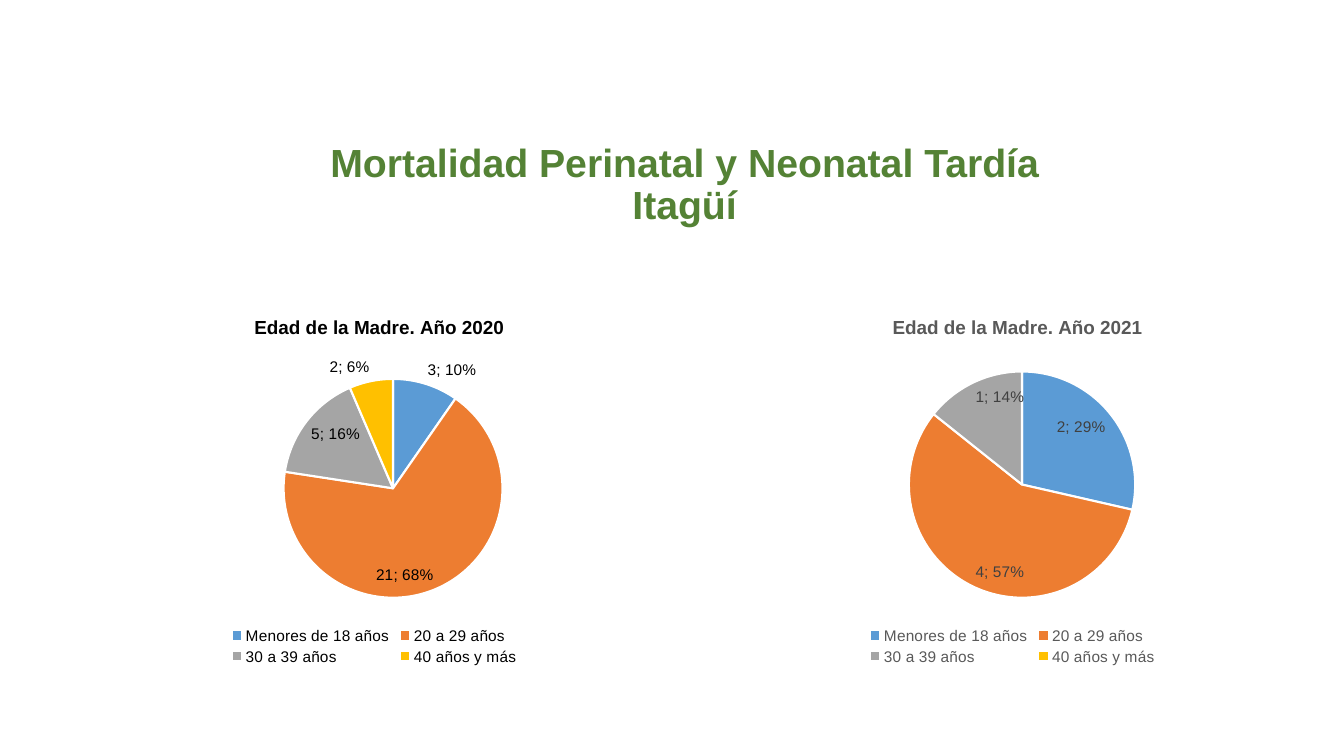
from lxml import etree
from pptx import Presentation
from pptx.chart.data import CategoryChartData
from pptx.dml.color import RGBColor
from pptx.enum.chart import XL_CHART_TYPE, XL_LABEL_POSITION, XL_LEGEND_POSITION
from pptx.enum.text import MSO_ANCHOR, PP_ALIGN
from pptx.oxml.ns import qn
from pptx.util import Inches, Pt

PIE = XL_CHART_TYPE.PIE
INSIDE = XL_LABEL_POSITION.INSIDE_END
OUTSIDE = XL_LABEL_POSITION.OUTSIDE_END
LEGEND_BOTTOM = XL_LEGEND_POSITION.BOTTOM
CENTER = PP_ALIGN.CENTER
BOTTOM = MSO_ANCHOR.BOTTOM

COLORS = {
    "green": "548235", "black": "000000", "gray": "595959",
    "dark": "404040", "white": "FFFFFF",
}
AGE_COLORS = {
    "Menores de 18 años": "5B9BD5", "20 a 29 años": "ED7D31",
    "30 a 39 años": "A5A5A5", "40 años y más": "FFC000",
}
TITLE_LAYOUT = {"x": 0.3, "y": 0.04}
LEGEND_LAYOUT = {"x": 0.26, "y": 0.88, "w": 0.48, "h": 0.12}
YEARS = [
    {"year": 2020, "values": (3, 21, 5, 2), "text": "black", "label": "black",
     "positions": (OUTSIDE, INSIDE, INSIDE, OUTSIDE),
     "plot": {"x": 0.35, "y": 0.22, "w": 0.36, "h": 0.59}},
    {"year": 2021, "values": (2, 4, 1, 0), "text": "gray", "label": "dark",
     "positions": (INSIDE,) * 4,
     "plot": {"x": 0.33, "y": 0.2, "w": 0.37, "h": 0.61}},
]


class SlideBuilder:
    """Draws styled titles and pie charts on one slide."""

    def __init__(self, slide):
        self.slide = slide
        self.font_name = "Arial"

    def style_font(self, font, size, color, bold=False):
        values = {"name": self.font_name, "size": Pt(size), "bold": bold}
        for name, value in values.items():
            setattr(font, name, value)
        font.color.rgb = RGBColor.from_string(COLORS[color])

    def title(self, text, left, top, width, height):
        shape = self.slide.shapes.add_textbox(
            Inches(left), Inches(top), Inches(width), Inches(height))
        frame = shape.text_frame
        frame.word_wrap = True
        frame.vertical_anchor = BOTTOM
        paragraph = frame.paragraphs[0]
        paragraph.text = text
        paragraph.alignment = CENTER
        paragraph.line_spacing = 0.9
        for run in paragraph.runs:
            self.style_font(run.font, 28, "green", True)

    def place(self, element, position, inner=False):
        for old in element.findall(qn("c:layout")):
            element.remove(old)
        layout = etree.Element(qn("c:layout"))
        manual = etree.SubElement(layout, qn("c:manualLayout"))
        settings = {"layoutTarget": "inner"} if inner else {}
        settings.update({"xMode": "edge", "yMode": "edge"})
        settings.update(position)
        for name, value in settings.items():
            etree.SubElement(manual, qn(f"c:{name}")).set("val", str(value))
        overlay = element.find(qn("c:overlay"))
        if overlay is None:
            element.insert(0, layout)
        else:
            overlay.addprevious(layout)

    def pie(self, year, left, top, width, height):
        data = CategoryChartData()
        data.categories = list(AGE_COLORS)
        data.add_series("Series 1", year["values"])
        chart = self.slide.shapes.add_chart(
            PIE, Inches(left), Inches(top), Inches(width), Inches(height), data).chart
        self.style_font(chart.font, 11, "black")
        chart.has_title = True
        paragraph = chart.chart_title.text_frame.paragraphs[0]
        run = paragraph.add_run()
        run.text = f"Edad de la Madre. Año {year['year']}"
        self.style_font(run.font, 13.5, year["text"], True)
        chart.chart_title.include_in_layout = False
        chart.has_legend = True
        legend = chart.legend
        legend.position = LEGEND_BOTTOM
        legend.include_in_layout = False
        self.style_font(legend.font, 11, year["text"])
        self.slices(chart, year)
        root = chart.element.find(qn("c:chart"))
        self.place(root.find(qn("c:title")), TITLE_LAYOUT)
        self.place(root.find(qn("c:legend")), LEGEND_LAYOUT)
        self.place(root.find(qn("c:plotArea")), year["plot"], True)

    def slices(self, chart, year):
        plot = chart.plots[0]
        plot.vary_by_categories = True
        series = plot.series[0]
        series.data_labels.show_value = False
        for index, color in enumerate(AGE_COLORS.values()):
            point = series.points[index]
            point.format.fill.solid()
            point.format.fill.fore_color.rgb = RGBColor.from_string(color)
            point.format.line.color.rgb = RGBColor.from_string(COLORS["white"])
            point.format.line.width = Pt(1.5)
            if year["values"][index]:
                self.style_font(point.data_label.font, 11, year["label"])
                point.data_label.position = year["positions"][index]
        for label in chart.element.iter(qn("c:dLbl")):
            label.find(qn("c:showPercent")).set("val", "1")
            separator = etree.SubElement(label, qn("c:separator"))
            separator.text = "; "


def main():
    presentation = Presentation()
    presentation.slide_width = Inches(13.33)
    presentation.slide_height = Inches(7.5)
    builder = SlideBuilder(presentation.slides.add_slide(presentation.slide_layouts[6]))
    builder.title("Mortalidad Perinatal y Neonatal Tardía\vItagüí", 1.55, 1.31, 10.48, 1)
    for index, year in enumerate(YEARS):
        builder.pie(year, 0.65 + index * 6.33, 2.95, 6.13, 3.68)
    presentation.save("out.pptx")


if __name__ == "__main__":
    main()
